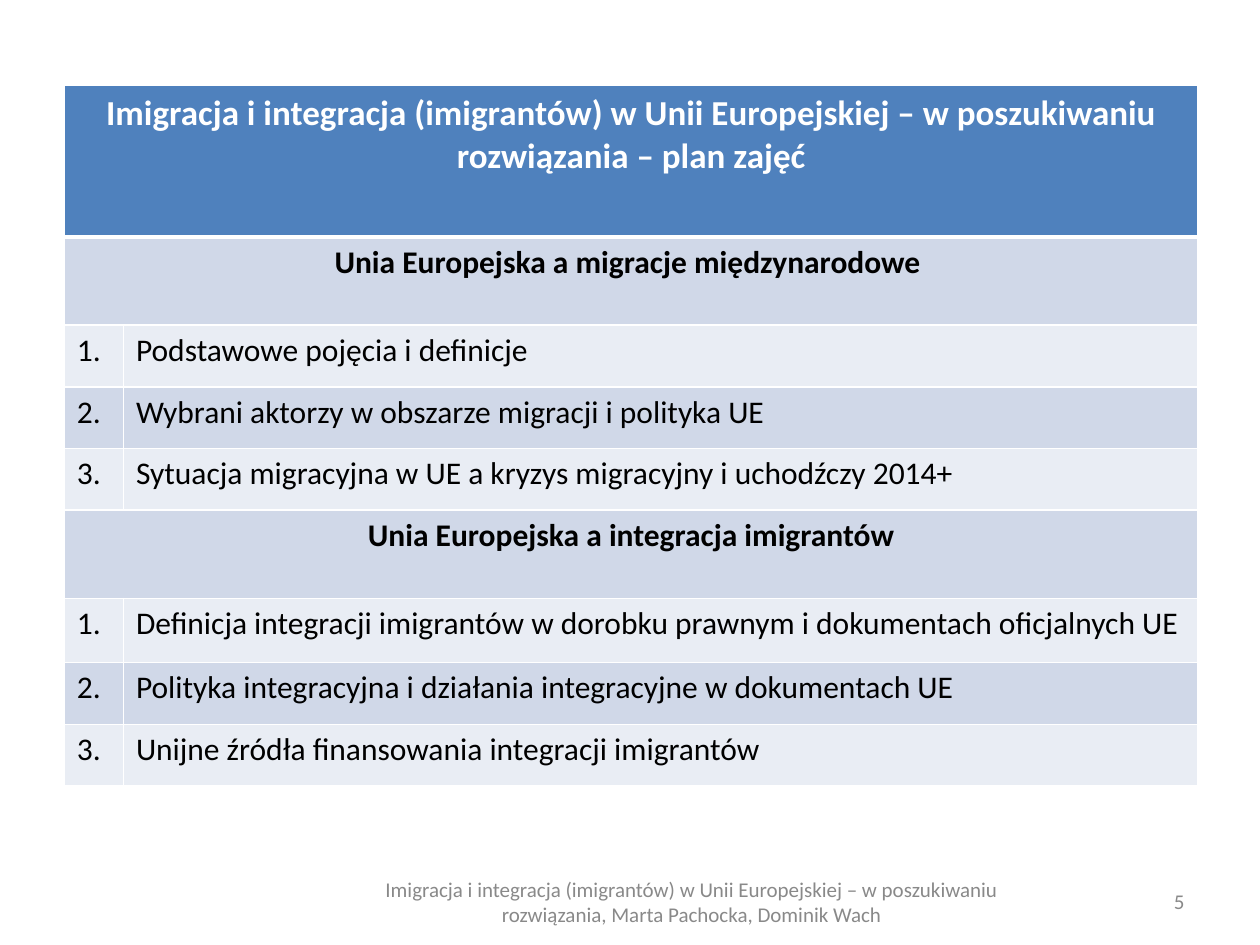
from pptx import Presentation
from pptx.dml.color import RGBColor
from pptx.enum import text
from pptx.oxml import parse_xml
from pptx.oxml.ns import nsdecls
from pptx.util import Inches, Pt

FONT = "Calibri"
WHITE, BLACK, GREY = "FFFFFF", "000000", "898989"
HEADER, DARK_BAND, LIGHT_BAND = "4F81BD", "D0D8E8", "E9EDF4"
COLUMN_WIDTHS = [0.47, 8.53]
ROWS = [
    (1.2, "Imigracja i integracja (imigrantów) w Unii Europejskiej – w poszukiwaniu "
          "rozwiązania – plan zajęć"),
    (0.7, "Unia Europejska a migracje międzynarodowe "),
    (0.49, "1.", "Podstawowe pojęcia i definicje"),
    (0.49, "2.", "Wybrani aktorzy w obszarze migracji i polityka UE"),
    (0.49, "3.", "Sytuacja migracyjna w UE a kryzys migracyjny i uchodźczy 2014+"),
    (0.7, "Unia Europejska a integracja imigrantów"),
    (0.51, "1.", "Definicja integracji imigrantów w dorobku prawnym i dokumentach oficjalnych UE"),
    (0.49, "2.", "Polityka integracyjna i działania integracyjne w dokumentach UE"),
    (0.49, "3.", "Unijne źródła finansowania integracji imigrantów"),
]
FOOTER = ("Imigracja i integracja (imigrantów) w Unii Europejskiej – w poszukiwaniu "
          "rozwiązania, Marta Pachocka, Dominik Wach")
ALIGN = text.PP_ALIGN


def colour(value):
    """Turn a hex string into a colour."""
    return RGBColor.from_string(value)


def write(frame, words, align, size, ink, bold=False):
    """Put one formatted paragraph into a text frame."""
    para = frame.paragraphs[0]
    para.alignment = align
    span = para.add_run()
    span.text = words
    for name, value in {"name": FONT, "size": Pt(size), "bold": bold}.items():
        setattr(span.font, name, value)
    span.font.color.rgb = colour(ink)


def add_borders(cell, top, bottom):
    """Give a cell white borders with the given top and bottom widths."""
    properties = cell._tc.get_or_add_tcPr()
    for side, width in {"L": 1, "R": 1, "T": top, "B": bottom}.items():
        properties.append(parse_xml(
            f'<a:ln{side} {nsdecls("a")} w="{Pt(width)}"><a:solidFill>'
            f'<a:srgbClr val="{WHITE}"/></a:solidFill></a:ln{side}>'))


def fill_row(table, index, words):
    """Fill one table row, merging it when it holds a single heading."""
    heading = len(words) == 1
    if heading:
        table.cell(index, 0).merge(table.cell(index, 1))
    band = HEADER if index == 0 else DARK_BAND if index % 2 else LIGHT_BAND
    for column, entry in enumerate(words):
        cell = table.cell(index, column)
        add_borders(cell, 3 if index == 1 else 1, 3 if index == 0 else 1)
        cell.fill.solid()
        cell.fill.fore_color.rgb = colour(band)
        write(cell.text_frame, entry, ALIGN.CENTER if heading else ALIGN.LEFT,
              20 if index == 0 else 18, WHITE if index == 0 else BLACK, heading)


def add_plan(page):
    """Add the table with the plan of classes."""
    height = sum(row[0] for row in ROWS)
    table = page.shapes.add_table(len(ROWS), len(COLUMN_WIDTHS), Inches(0.51), Inches(0.68),
                                  Inches(sum(COLUMN_WIDTHS)), Inches(height)).table
    for column, width in zip(table.columns, COLUMN_WIDTHS):
        column.width = Inches(width)
    for index, (row_height, *words) in enumerate(ROWS):
        table.rows[index].height = Inches(row_height)
        fill_row(table, index, words)


def add_note(page, place, words, align):
    """Add a small grey text box at the foot of the page."""
    frame = page.shapes.add_textbox(*map(Inches, place)).text_frame
    frame.word_wrap = True
    frame.vertical_anchor = text.MSO_ANCHOR.MIDDLE
    write(frame, words, align, 12, GREY)


def main():
    """Build and save the deck."""
    deck = Presentation()
    deck.slide_width, deck.slide_height = Inches(10), Inches(7.5)
    page = deck.slides.add_slide(deck.slide_layouts[6])
    add_plan(page)
    add_note(page, (7.17, 6.95, 2.33, 0.4), "5", ALIGN.RIGHT)
    add_note(page, (2.83, 6.91, 5.32, 0.49), FOOTER, ALIGN.CENTER)
    deck.save("out.pptx")


if __name__ == "__main__":
    main()
